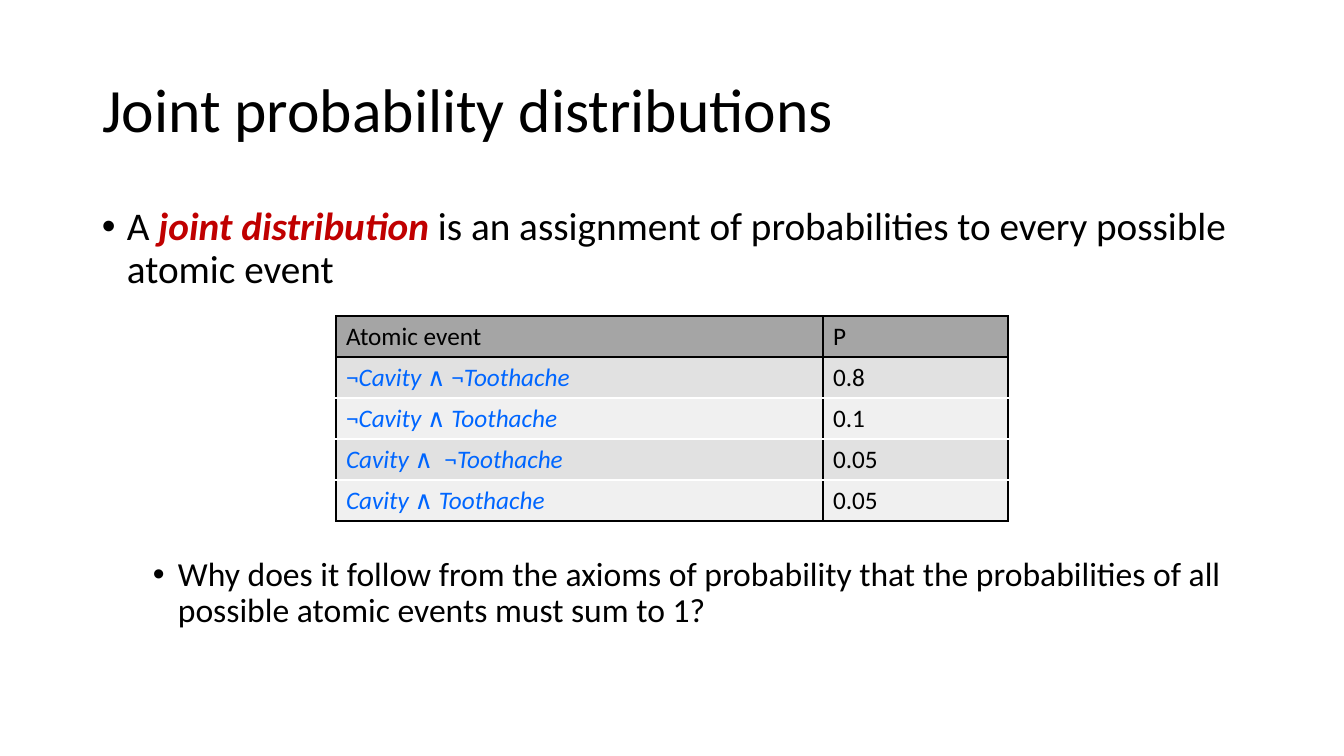
"""Build the slide on joint probability distributions."""
import pptx
import pptx.dml.color
import pptx.enum.text
import pptx.oxml
import pptx.oxml.ns
import pptx.util
from lxml import etree

RGB = pptx.dml.color.RGBColor
BLACK = RGB(0x00, 0x00, 0x00)
WHITE = RGB(0xFF, 0xFF, 0xFF)
RED = RGB(0xC0, 0x00, 0x00)
BLUE = RGB(0x00, 0x66, 0xFF)
HEADER_GRAY = RGB(0xA5, 0xA5, 0xA5)
DARK_BAND = RGB(0xE1, 0xE1, 0xE1)
LIGHT_BAND = RGB(0xF0, 0xF0, 0xF0)
FONT = "Calibri"
ROW_HEIGHT = 41


def px(length):
    return pptx.util.Emu(round(length * 914400 / 100.8))


def style(paragraph, size, color=BLACK):
    paragraph.font.name = FONT
    paragraph.font.size = pptx.util.Pt(size)
    paragraph.font.bold = False
    paragraph.font.color.rgb = color


deck = pptx.Presentation()
deck.slide_width, deck.slide_height = px(1344), px(756)
slide = deck.slides.add_slide(deck.slide_layouts[5])

title = slide.shapes.title
title.left, title.top, title.width, title.height = px(92), px(40), px(1159), px(146)
title.text_frame.text = "Joint probability distributions"
title.text_frame.vertical_anchor = pptx.enum.text.MSO_ANCHOR.MIDDLE
heading = title.text_frame.paragraphs[0]
heading.alignment = pptx.enum.text.PP_ALIGN.LEFT
heading.line_spacing = 0.9
style(heading, 44)

body = slide.shapes.add_textbox(px(92), px(202), px(1159), px(480)).text_frame
body.word_wrap = True
definition = body.paragraphs[0]
question = body.add_paragraph()
question.level = 1
question.space_before = pptx.util.Pt(190)
for bullet, margin, size in [(definition, 25, 28), (question, 76, 24)]:
    bullet.line_spacing = 0.9
    properties = bullet._p.get_or_add_pPr()
    properties.set("marL", str(px(margin)))
    properties.set("indent", str(px(-25)))
    etree.SubElement(properties, pptx.oxml.ns.qn("a:buFont")).set("typeface", "Arial")
    etree.SubElement(properties, pptx.oxml.ns.qn("a:buChar")).set("char", "•")
    style(bullet, size)

definition.add_run().text = "A "
term = definition.add_run()
term.text = "joint distribution "
term.font.bold = term.font.italic = True
term.font.color.rgb = RED
definition.add_run().text = "is an assignment of probabilities to every possible atomic event"
question.add_run().text = (
    "Why does it follow from the axioms of probability that the probabilities "
    "of all possible atomic events must sum to 1?"
)

rows = [
    (["Atomic event"], "P"),
    (["¬", "Cavity ", "∧ ¬", "Toothache"], "0.8"),
    (["¬", "Cavity ", "∧", " Toothache"], "0.1"),
    (["Cavity ", "∧  ¬", "Toothache"], "0.05"),
    (["Cavity ", "∧", " Toothache"], "0.05"),
]
events = slide.shapes.add_table(
    len(rows), 2, px(336), px(316), px(672), px(ROW_HEIGHT * len(rows))
).table
events.horz_banding = False
events.columns[0].width, events.columns[1].width = px(487), px(185)

for index, (event, probability) in enumerate(rows):
    events.rows[index].height = px(ROW_HEIGHT)
    top = BLACK if index < 2 else WHITE
    bottom = BLACK if index in (0, len(rows) - 1) else WHITE
    band = DARK_BAND if index % 2 else LIGHT_BAND
    for column, parts in enumerate([event, [probability]]):
        cell = events.cell(index, column)
        cell.fill.solid()
        cell.fill.fore_color.rgb = band if index else HEADER_GRAY
        text = cell.text_frame.paragraphs[0]
        style(text, 18, BLUE if index and column == 0 else BLACK)
        for part in parts:
            run = text.add_run()
            run.text = part
            if part.strip() in ("Cavity", "Toothache"):
                run.font.italic = True
        borders = [("L", BLACK), ("R", BLACK), ("T", top), ("B", bottom)]
        for place, (side, color) in enumerate(borders):
            line = pptx.oxml.parse_xml(
                f'<a:ln{side} {pptx.oxml.ns.nsdecls("a")} w="12700"><a:solidFill>'
                f'<a:srgbClr val="{color}"/></a:solidFill></a:ln{side}>'
            )
            cell._tc.get_or_add_tcPr().insert(place, line)

deck.save("out.pptx")
